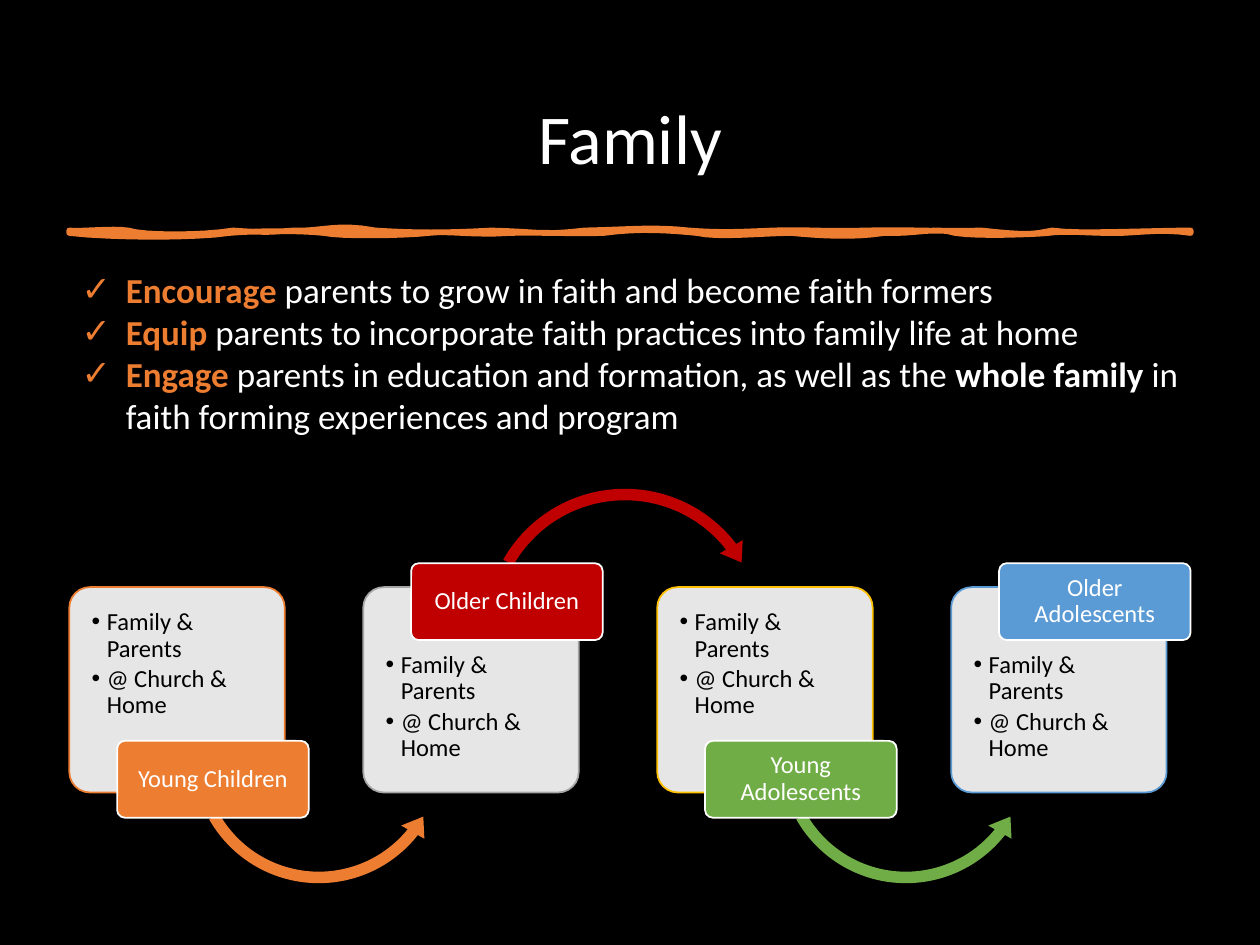
from dataclasses import dataclass
from typing import Optional

from lxml.etree import SubElement
from pptx import Presentation
from pptx.dml.color import RGBColor
from pptx.enum.shapes import MSO_SHAPE
from pptx.enum.text import MSO_ANCHOR, PP_ALIGN
from pptx.oxml.ns import qn
from pptx.util import Inches, Pt

FONT, BULLET_FONT = "Calibri", "Arial"
ORANGE, RED, GREEN, BLUE = "ED7D31", "C00000", "70AD47", "5B9BD5"
WHITE, BLACK = "FFFFFF", "000000"

CARD_LEFT, CARD_STEP, CARD_TOP = 0.55, 2.333, 4.66
CARD_WIDTH, CARD_HEIGHT = 1.71, 1.63
LABEL_OFFSET, LABEL_WIDTH, LABEL_HEIGHT = 0.38, 1.52, 0.61
CARD_LINES = ["Family & Parents", "@ Church & Home"]

# Each curve of the brush stroke: two control points and an end point.
STROKE_START = (0.55, 1.83)
STROKE_CURVES = [
    (0.64, 1.84, 0.89, 1.81, 1.02, 1.83), (1.14, 1.87, 1.6, 1.87, 1.85, 1.83),
    (2.13, 1.85, 2.16, 1.84, 2.33, 1.83), (2.54, 1.84, 2.68, 1.77, 2.98, 1.83),
    (3.31, 1.85, 3.52, 1.85, 3.9, 1.83), (4.31, 1.84, 4.28, 1.87, 4.64, 1.83),
    (5.03, 1.82, 5.2, 1.8, 5.47, 1.83), (5.73, 1.85, 5.88, 1.84, 6.13, 1.83),
    (6.41, 1.82, 6.51, 1.84, 6.87, 1.83), (7.21, 1.82, 7.41, 1.84, 7.79, 1.83),
    (8.17, 1.87, 8.19, 1.86, 8.35, 1.83), (8.55, 1.86, 9.13, 1.83, 9.45, 1.83),
    (9.45, 1.84, 9.45, 1.85, 9.45, 1.85), (9.2, 1.81, 8.95, 1.86, 8.8, 1.85),
    (8.63, 1.85, 8.45, 1.83, 8.32, 1.85), (8.22, 1.86, 7.77, 1.88, 7.58, 1.85),
    (7.43, 1.8, 7.27, 1.86, 7.02, 1.85), (6.76, 1.89, 6.5, 1.87, 6.28, 1.85),
    (6.07, 1.85, 5.7, 1.89, 5.53, 1.85), (5.32, 1.83, 5.08, 1.81, 4.79, 1.85),
    (4.5, 1.86, 4.35, 1.84, 4.05, 1.85), (3.74, 1.87, 3.56, 1.83, 3.4, 1.85),
    (3.23, 1.87, 2.71, 1.88, 2.57, 1.85), (2.38, 1.83, 2.06, 1.83, 1.82, 1.85),
    (1.56, 1.89, 0.91, 1.89, 0.55, 1.85),
]


@dataclass
class Run:
    text: str
    color: str = WHITE
    bold: bool = False


@dataclass
class Arrow:
    shape_type: MSO_SHAPE
    left: float
    top: float
    size: float
    adjustments: tuple


@dataclass
class Stage:
    label: str
    color: str
    outline: str
    label_on_top: bool
    arrow: Optional[Arrow] = None


LOWER_BEND = (0.043, 5.369, 23.125, 90.246, 0.05)
UPPER_BEND = (0.039, 4.821, 193.425, 125.756, 0.045)

STAGES = [
    Stage("Young Children", ORANGE, ORANGE, False,
          Arrow(MSO_SHAPE.LEFT_CIRCULAR_ARROW, 1.47, 4.95, 2.12, LOWER_BEND)),
    Stage("Older Children", RED, "A5A5A5", True,
          Arrow(MSO_SHAPE.CIRCULAR_ARROW, 3.79, 3.82, 2.34, UPPER_BEND)),
    Stage("Young Adolescents", GREEN, "FFC000", False,
          Arrow(MSO_SHAPE.LEFT_CIRCULAR_ARROW, 6.13, 4.95, 2.12, LOWER_BEND)),
    Stage("Older Adolescents", BLUE, BLUE, True),
]

GOALS = [
    [Run("Encourage", ORANGE, True),
     Run(" parents to grow in faith and become faith formers")],
    [Run("Equip", ORANGE, True),
     Run(" parents to incorporate faith practices into family life at home")],
    [Run("Engage", ORANGE, True),
     Run(" parents in education and formation, as well as the "),
     Run("whole family ", bold=True),
     Run("in faith forming experiences and program")],
]


def rgb(color: str) -> RGBColor:
    return RGBColor.from_string(color)


def set_frame(frame, margins=(0.1, 0.05, 0.1, 0.05), anchor=MSO_ANCHOR.TOP) -> None:
    left, top, right, bottom = margins
    values = {
        "word_wrap": True, "vertical_anchor": anchor,
        "margin_left": Inches(left), "margin_top": Inches(top),
        "margin_right": Inches(right), "margin_bottom": Inches(bottom),
    }
    for name, value in values.items():
        setattr(frame, name, value)


def write_paragraphs(frame, paragraphs: list, size: float, **formats) -> list:
    """Write lists of runs as paragraphs that share one format."""
    written = []
    for index, runs in enumerate(paragraphs):
        paragraph = frame.add_paragraph() if index else frame.paragraphs[0]
        for name, value in formats.items():
            setattr(paragraph, name, value)
        for item in runs:
            run = paragraph.add_run()
            run.text = item.text
            values = {"name": FONT, "size": Pt(size), "bold": item.bold}
            for name, value in values.items():
                setattr(run.font, name, value)
            run.font.color.rgb = rgb(item.color)
        written.append(paragraph)
    return written


def add_bullet(paragraph, character: str, indent: float, color: str) -> None:
    properties = paragraph._p.get_or_add_pPr()
    properties.set("marL", str(Inches(indent)))
    properties.set("indent", str(-Inches(indent)))
    bullet_color = SubElement(properties, qn("a:buClr"))
    SubElement(bullet_color, qn("a:srgbClr"), val=color)
    SubElement(properties, qn("a:buFont"), typeface=BULLET_FONT)
    SubElement(properties, qn("a:buChar"), char=character)


def paint(shape, fill: str, line: Optional[str] = None, width: float = 1) -> None:
    shape.shadow.inherit = False
    shape.fill.solid()
    shape.fill.fore_color.rgb = rgb(fill)
    if line:
        shape.line.color.rgb = rgb(line)
        shape.line.width = Pt(width)
    else:
        shape.line.fill.background()


def add_preset(slide, shape_type, left: float, top: float, width: float, height: float,
               adjustments: tuple):
    shape = slide.shapes.add_shape(
        shape_type, Inches(left), Inches(top), Inches(width), Inches(height))
    for index, value in enumerate(adjustments):
        shape.adjustments[index] = value
    return shape


def add_text_box(slide, left: float, top: float, width: float, height: float):
    return slide.shapes.add_textbox(
        Inches(left), Inches(top), Inches(width), Inches(height)).text_frame


def add_brush_stroke(slide, steps: int = 8) -> None:
    points, start = [], STROKE_START
    for x1, y1, x2, y2, x3, y3 in STROKE_CURVES:
        for step in range(1, steps + 1):
            t = step / steps
            weights = ((1 - t) ** 3, 3 * t * (1 - t) ** 2, 3 * t * t * (1 - t), t ** 3)
            points.append(tuple(
                Inches(sum(weight * value for weight, value in zip(weights, values)))
                for values in ((start[0], x1, x2, x3), (start[1], y1, y2, y3))))
        start = (x3, y3)
    builder = slide.shapes.build_freeform(*map(Inches, STROKE_START))
    builder.add_line_segments(points, close=True)
    paint(builder.convert_to_shape(), ORANGE, ORANGE, 3.25)


def add_stage(slide, stage: Stage, left: float) -> None:
    card = add_preset(slide, MSO_SHAPE.ROUNDED_RECTANGLE, left, CARD_TOP,
                      CARD_WIDTH, CARD_HEIGHT, (0.1,))
    paint(card, WHITE, stage.outline)
    fill_color = card._element.spPr.find(qn("a:solidFill")).find(qn("a:srgbClr"))
    SubElement(fill_color, qn("a:alpha"), val="90000")
    set_frame(card.text_frame, (0.13, 0.47 if stage.label_on_top else 0.13, 0.13, 0.1))
    for paragraph in write_paragraphs(
            card.text_frame, [[Run(line, BLACK)] for line in CARD_LINES], 14,
            alignment=PP_ALIGN.LEFT, line_spacing=0.9, space_after=Pt(2)):
        add_bullet(paragraph, "•", 0.12, BLACK)

    if stage.arrow:
        arrow = stage.arrow
        paint(add_preset(slide, arrow.shape_type, arrow.left, arrow.top,
                         arrow.size, arrow.size, arrow.adjustments), stage.color)

    label = add_preset(slide, MSO_SHAPE.ROUNDED_RECTANGLE, left + LABEL_OFFSET,
                       4.47 if stage.label_on_top else 5.88,
                       LABEL_WIDTH, LABEL_HEIGHT, (0.1,))
    paint(label, stage.color, WHITE)
    set_frame(label.text_frame, (0.05, 0.04, 0.05, 0.04), MSO_ANCHOR.MIDDLE)
    write_paragraphs(label.text_frame, [[Run(stage.label)]], 14,
                     alignment=PP_ALIGN.CENTER, line_spacing=0.9)


def main() -> None:
    presentation = Presentation()
    presentation.slide_width, presentation.slide_height = Inches(10), Inches(7.5)
    slide = presentation.slides.add_slide(presentation.slide_layouts[6])
    slide.background.fill.solid()
    slide.background.fill.fore_color.rgb = rgb(BLACK)

    title = add_text_box(slide, 0.69, 0.4, 8.62, 1.45)
    set_frame(title, anchor=MSO_ANCHOR.MIDDLE)
    write_paragraphs(title, [[Run("Family")]], 40,
                     alignment=PP_ALIGN.CENTER, line_spacing=0.9)
    add_brush_stroke(slide)
    for index, stage in enumerate(STAGES):
        add_stage(slide, stage, CARD_LEFT + index * CARD_STEP)

    goals = add_text_box(slide, 0.55, 2.08, 8.9, 1.75)
    set_frame(goals)
    for paragraph in write_paragraphs(goals, GOALS, 20):
        add_bullet(paragraph, "✓", 0.35, ORANGE)
    presentation.save("out.pptx")


if __name__ == "__main__":
    main()
